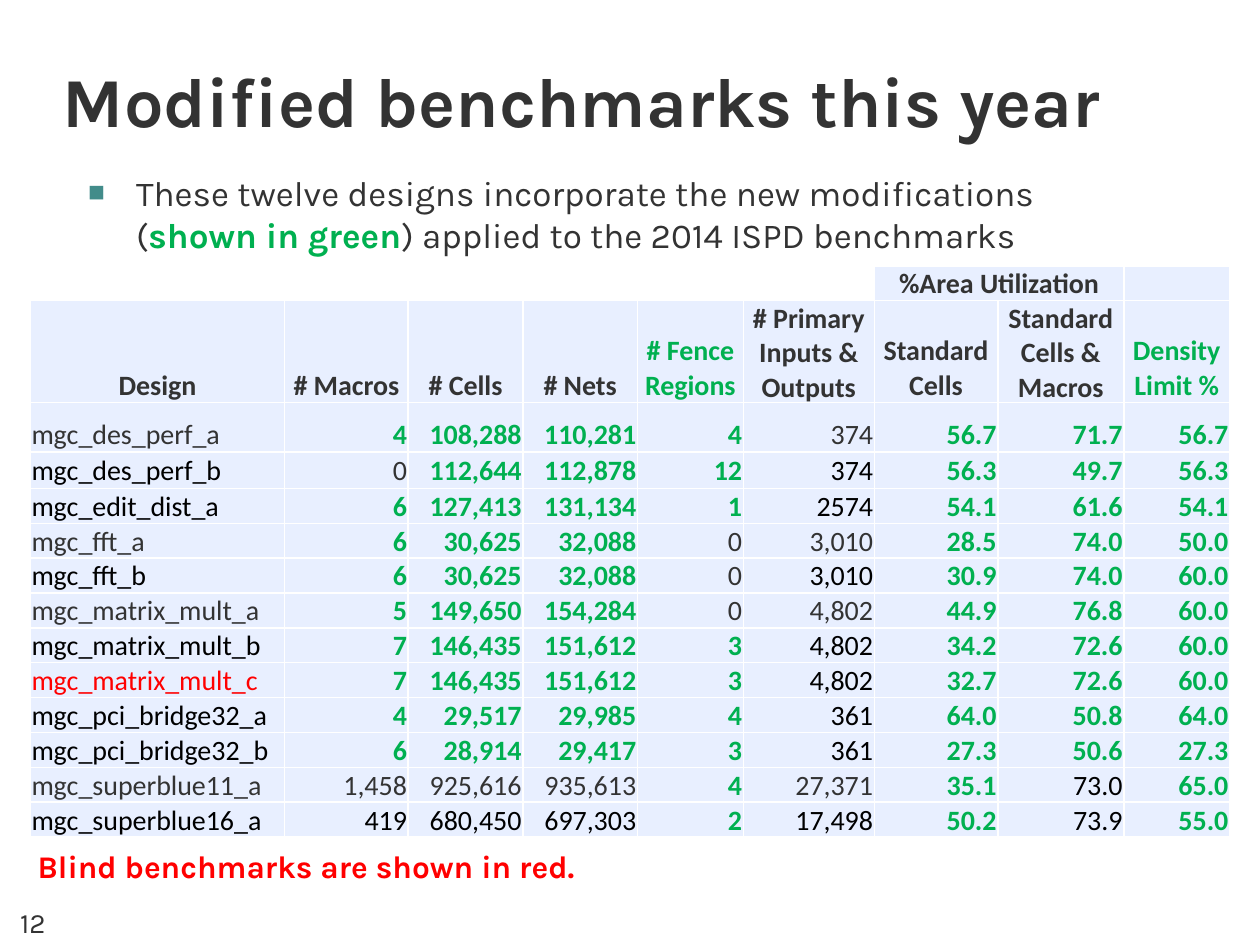
from dataclasses import dataclass

from lxml import etree
from pptx import Presentation
from pptx import util as u
from pptx.dml.color import RGBColor
from pptx.enum import text as t
from pptx.oxml import ns


@dataclass(frozen=True)
class Theme:
    ink: str = "333333"
    black: str = "000000"
    green: str = "00B050"
    red: str = "FF0000"
    bullet: str = "428C8A"
    cell: str = "E8EFFF"
    border: str = "FFFFFF"
    heading_font: str = "Karla"
    table_font: str = "Calibri"
    title_size: int = 40
    body_size: int = 20
    note_size: int = 18
    small_size: int = 16


THEME = Theme()


@dataclass(frozen=True)
class Span:
    text: str
    color: str = THEME.ink
    bold: bool = False


@dataclass(frozen=True)
class Caption:
    box: tuple[float, float, float, float]
    spans: tuple[Span, ...]
    size: int
    inset: float = 0.1
    anchor: t.MSO_ANCHOR = t.MSO_ANCHOR.TOP
    align: t.PP_ALIGN = t.PP_ALIGN.LEFT
    bulleted: bool = False


@dataclass(frozen=True)
class Design:
    name: str
    values: str
    ink: str = THEME.black
    unmodified: tuple[int, ...] = (5,)
    blind: bool = False


TITLE = Caption((0, 0, 10, 1.17), (Span("Modified benchmarks this year", bold=True),),
                THEME.title_size, 0.5, t.MSO_ANCHOR.BOTTOM)
INTRO = Caption((0.2, 1.31, 9.24, 0.88), (
    Span("These twelve designs incorporate the new modifications"),
    Span("\n"),
    Span("("),
    Span("shown in green", THEME.green, True),
    Span(") applied to the 2014 ISPD benchmarks"),
), THEME.body_size, 0.5, bulleted=True)
BLIND_NOTE = Caption((0.2, 6.67, 5.34, 0.4),
                     (Span("Blind benchmarks are shown in red.", THEME.red, True),),
                     THEME.note_size)
PAGE_NUMBER = Caption((0, 7.25, 0.52, 0.25), (Span("12"),), THEME.small_size,
                      anchor=t.MSO_ANCHOR.BOTTOM, align=t.PP_ALIGN.CENTER)

HEADERS = ("Design", "# Macros", "# Cells", "# Nets", "# Fence Regions",
           "# Primary Inputs & Outputs", "Standard Cells",
           "Standard Cells & Macros", "Density Limit %")
NEW_HEADERS = ("# Fence Regions", "Density Limit %")
COLUMN_WIDTHS = (2.02, 0.98, 0.91, 0.91, 0.84, 1.04, 0.98, 1, 0.84)
UTILIZATION, MACRO_UTILIZATION, DENSITY = 6, 7, 8

DESIGNS = (
    Design("mgc_des_perf_a", "4 108,288 110,281 4 374 56.7 71.7 56.7", THEME.ink),
    Design("mgc_des_perf_b", "0 112,644 112,878 12 374 56.3 49.7 56.3"),
    Design("mgc_edit_dist_a", "6 127,413 131,134 1 2574 54.1 61.6 54.1"),
    Design("mgc_fft_a", "6 30,625 32,088 0 3,010 28.5 74.0 50.0", THEME.ink),
    Design("mgc_fft_b", "6 30,625 32,088 0 3,010 30.9 74.0 60.0"),
    Design("mgc_matrix_mult_a", "5 149,650 154,284 0 4,802 44.9 76.8 60.0", THEME.ink),
    Design("mgc_matrix_mult_b", "7 146,435 151,612 3 4,802 34.2 72.6 60.0"),
    Design("mgc_matrix_mult_c", "7 146,435 151,612 3 4,802 32.7 72.6 60.0", blind=True),
    Design("mgc_pci_bridge32_a", "4 29,517 29,985 4 361 64.0 50.8 64.0"),
    Design("mgc_pci_bridge32_b", "6 28,914 29,417 3 361 27.3 50.6 27.3"),
    Design("mgc_superblue11_a", "1,458 925,616 935,613 4 27,371 35.1 73.0 65.0",
           THEME.ink, (1, 2, 3, 5, 7)),
    Design("mgc_superblue16_a", "419 680,450 697,303 2 17,498 50.2 73.9 55.0",
           unmodified=(1, 2, 3, 5, 7)),
)
ROW_HEIGHTS = (0.25, 0.73, 0.39, 0.29) + (0.25,) * (len(DESIGNS) - 2)


def apply(target, formats: dict) -> None:
    for name, value in formats.items():
        setattr(target, name, value)


def style_font(font, face: str, size: int, color: str, bold: bool) -> None:
    apply(font, {"name": face, "size": u.Pt(size), "bold": bold})
    font.color.rgb = RGBColor.from_string(color)


def add_bullet(paragraph) -> None:
    properties = paragraph._p.get_or_add_pPr()
    properties.set("marL", str(u.Inches(0.38)))
    properties.set("indent", str(u.Inches(-0.38)))
    color = etree.SubElement(properties, ns.qn("a:buClr"))
    etree.SubElement(color, ns.qn("a:srgbClr"), val=THEME.bullet)
    etree.SubElement(properties, ns.qn("a:buSzPct"), val="80000")
    etree.SubElement(properties, ns.qn("a:buFont"), typeface="Arial")
    etree.SubElement(properties, ns.qn("a:buChar"), char="■")


def draw_caption(slide, caption: Caption) -> None:
    frame = slide.shapes.add_textbox(*map(u.Inches, caption.box)).text_frame
    apply(frame, {"word_wrap": True, "vertical_anchor": caption.anchor,
                  "margin_left": u.Inches(caption.inset),
                  "margin_right": u.Inches(caption.inset)})
    paragraph = frame.paragraphs[0]
    paragraph.alignment = caption.align
    if caption.bulleted:
        add_bullet(paragraph)
    for span in caption.spans:
        if span.text == "\n":
            paragraph.add_line_break()
            continue
        run = paragraph.add_run()
        run.text = span.text
        style_font(run.font, THEME.heading_font, caption.size, span.color, span.bold)


def add_borders(cell) -> None:
    properties = cell._tc.get_or_add_tcPr()
    for position, side in enumerate(("a:lnL", "a:lnR", "a:lnT", "a:lnB")):
        line = etree.Element(ns.qn(side), w=str(u.Pt(1)))
        fill = etree.SubElement(line, ns.qn("a:solidFill"))
        etree.SubElement(fill, ns.qn("a:srgbClr"), val=THEME.border)
        properties.insert(position, line)


def fill_cell(cell, span: Span, align: t.PP_ALIGN, shaded: bool = True) -> None:
    apply(cell, {"margin_left": u.Inches(0.01), "margin_right": u.Inches(0.01),
                 "margin_top": u.Inches(0.01), "margin_bottom": 0,
                 "vertical_anchor": t.MSO_ANCHOR.BOTTOM})
    if shaded:
        cell.fill.solid()
        cell.fill.fore_color.rgb = RGBColor.from_string(THEME.cell)
    else:
        cell.fill.background()
    add_borders(cell)
    paragraph = cell.text_frame.paragraphs[0]
    paragraph.alignment = align
    if span.text:
        paragraph.add_run().text = span.text
    for part in (paragraph, *paragraph.runs):
        style_font(part.font, THEME.table_font, THEME.small_size, span.color, span.bold)


def value_span(design: Design, column: int, value: str) -> Span:
    if value == "0":
        return Span(value)
    if column not in design.unmodified:
        return Span(value, THEME.green, True)
    return Span(value, THEME.black if column == MACRO_UTILIZATION else design.ink)


def draw_benchmarks(slide) -> None:
    table = slide.shapes.add_table(
        len(ROW_HEIGHTS), len(COLUMN_WIDTHS), u.Inches(0.24), u.Inches(2.11),
        u.Inches(sum(COLUMN_WIDTHS)), u.Inches(sum(ROW_HEIGHTS))).table
    apply(table, {"first_row": False, "horz_banding": False})
    for column, width in zip(table.columns, COLUMN_WIDTHS):
        column.width = u.Inches(width)
    for row, height in zip(table.rows, ROW_HEIGHTS):
        row.height = u.Inches(height)
    table.cell(0, UTILIZATION).merge(table.cell(0, MACRO_UTILIZATION))
    for column, header in enumerate(HEADERS):
        group = "%Area Utilization" if column == UTILIZATION else ""
        fill_cell(table.cell(0, column), Span(group, bold=True), t.PP_ALIGN.CENTER,
                  column >= UTILIZATION)
        color = THEME.green if header in NEW_HEADERS else THEME.ink
        fill_cell(table.cell(1, column), Span(header, color, True), t.PP_ALIGN.CENTER)
    for row, design in enumerate(DESIGNS, 2):
        name = Span(design.name, THEME.red if design.blind else design.ink)
        fill_cell(table.cell(row, 0), name, t.PP_ALIGN.LEFT)
        for column, value in enumerate(design.values.split(), 1):
            fill_cell(table.cell(row, column), value_span(design, column, value),
                      t.PP_ALIGN.RIGHT)


def main() -> None:
    deck = Presentation()
    apply(deck, {"slide_width": u.Inches(10), "slide_height": u.Inches(7.5)})
    slide = deck.slides.add_slide(deck.slide_layouts[6])
    draw_caption(slide, TITLE)
    draw_benchmarks(slide)
    for caption in (PAGE_NUMBER, BLIND_NOTE, INTRO):
        draw_caption(slide, caption)
    deck.save("out.pptx")


if __name__ == "__main__":
    main()
